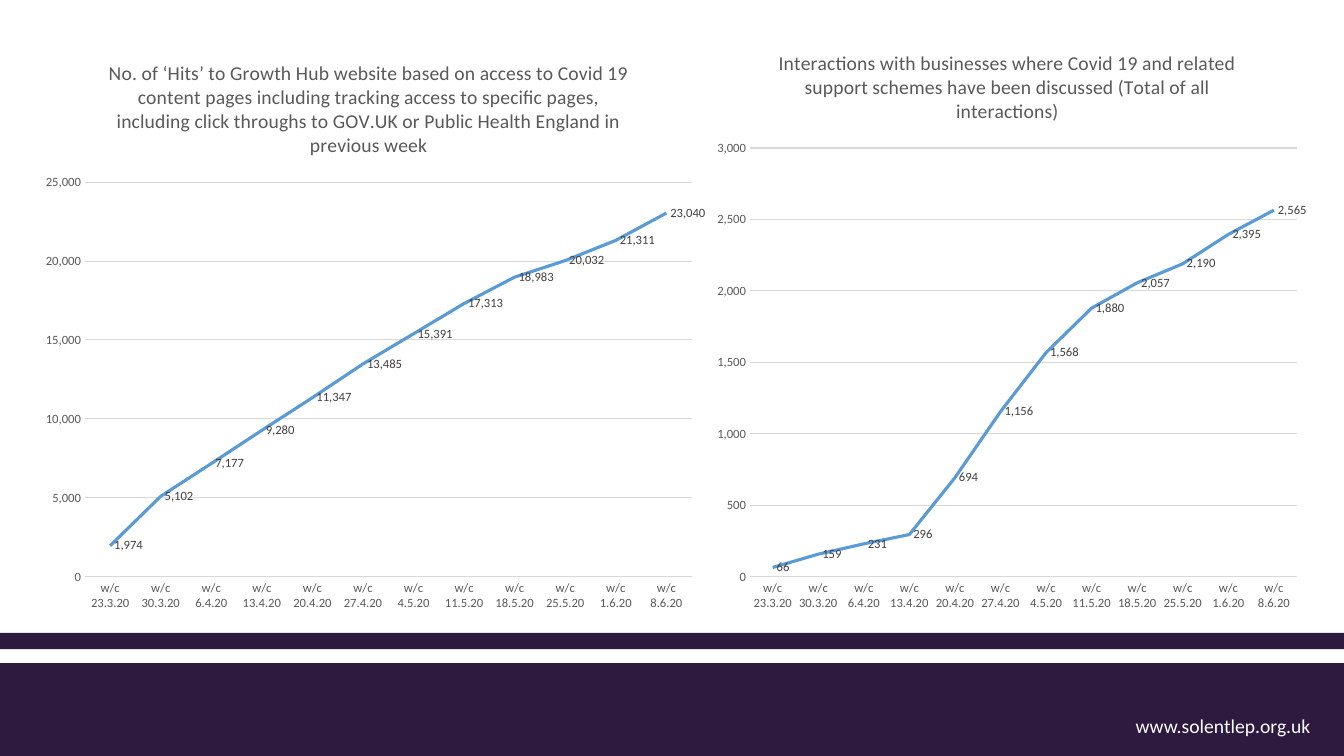
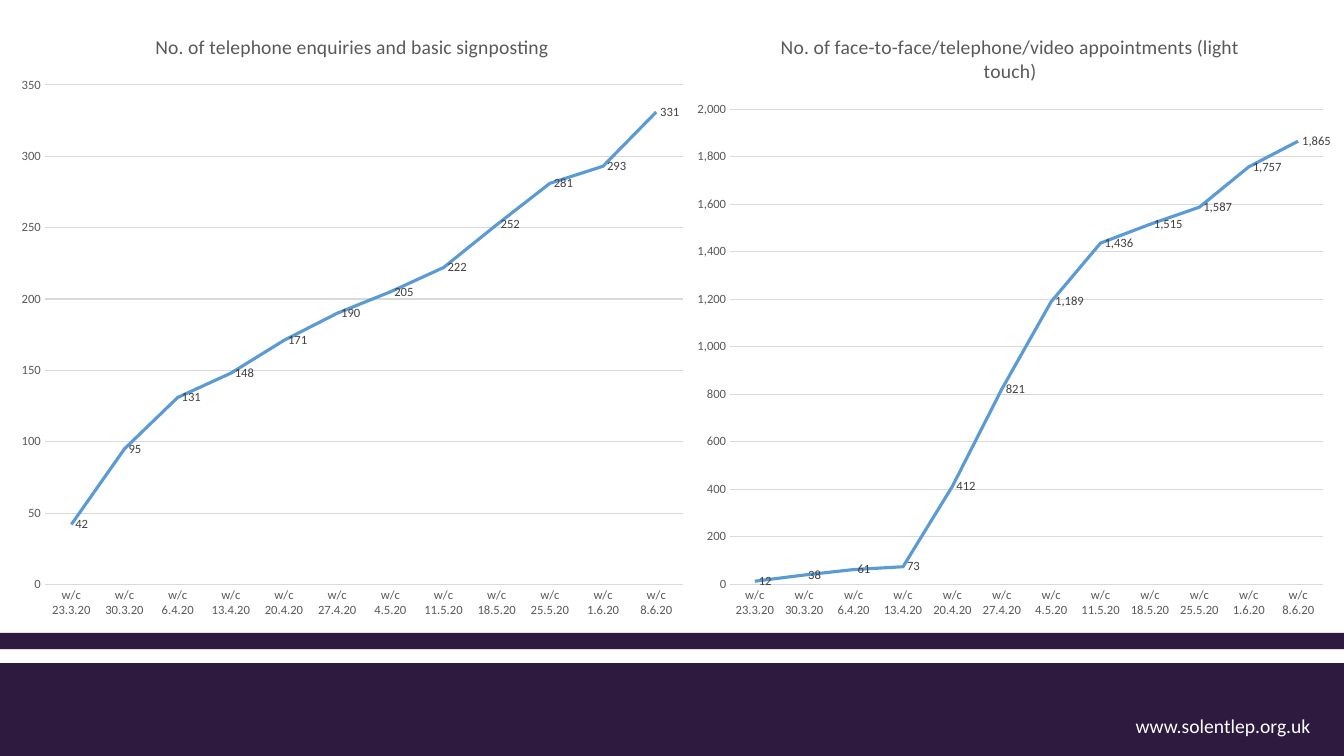
import dataclasses

import pptx
import pptx.chart.chart
import pptx.chart.data
import pptx.dml.color
import pptx.enum.chart
import pptx.enum.shapes
import pptx.oxml
import pptx.oxml.ns
import pptx.slide
import pptx.text.text
import pptx.util

Cm = pptx.util.Cm
Pt = pptx.util.Pt
RGBColor = pptx.dml.color.RGBColor

PURPLE = RGBColor(0x2D, 0x1A, 0x3E)
WHITE = RGBColor(0xFF, 0xFF, 0xFF)
BLACK = RGBColor(0x00, 0x00, 0x00)
BLUE = RGBColor(0x5B, 0x9B, 0xD5)
GRID_GREY = RGBColor(0xD9, 0xD9, 0xD9)
TEXT_GREY = RGBColor(0x59, 0x59, 0x59)
LABEL_GREY = RGBColor(0x40, 0x40, 0x40)

FONT = "Calibri"
NUMBER_FORMAT = "#,##0"
SLIDE_WIDTH = 33.87
SLIDE_HEIGHT = 19.05
WEEKS = [
    f"w/c {date}.20"
    for date in (
        "23.3", "30.3", "6.4", "13.4", "20.4", "27.4",
        "4.5", "11.5", "18.5", "25.5", "1.6", "8.6",
    )
]


@dataclasses.dataclass(frozen=True)
class Box:
    left: float
    top: float
    width: float
    height: float

    def lengths(self) -> tuple[int, int, int, int]:
        return Cm(self.left), Cm(self.top), Cm(self.width), Cm(self.height)


@dataclasses.dataclass(frozen=True)
class LineChart:
    title: str
    frame: Box
    plot: Box
    maximum: int
    step: int
    values: tuple[int, ...]


BANDS = (Box(0, 16.71, SLIDE_WIDTH, 2.34), Box(0, 15.95, SLIDE_WIDTH, 0.41))
ADDRESS_BOX = Box(28.37, 17.86, 5, 1.02)

SLIDES = (
    (
        LineChart(
            "No. of ‘Hits’ to Growth Hub website based on access to Covid 19 "
            "content pages including tracking access to specific pages, including "
            "click throughs to GOV.UK or Public Health England in previous week",
            Box(0.81, 0.97, 16.97, 14.71),
            Box(2.14, 4.59, 15.3, 9.95),
            25000,
            5000,
            (1974, 5102, 7177, 9280, 11347, 13485,
             15391, 17313, 18983, 20032, 21311, 23040),
        ),
        LineChart(
            "Interactions with businesses where Covid 19 and related support "
            "schemes have been discussed (Total of all interactions)",
            Box(17.78, 0.71, 15.21, 14.99),
            Box(18.9, 3.73, 13.78, 10.81),
            3000,
            500,
            (66, 159, 231, 296, 694, 1156, 1568, 1880, 2057, 2190, 2395, 2565),
        ),
    ),
    (
        LineChart(
            "No. of telephone enquiries and basic signposting",
            Box(0.2, 0.3, 17.35, 15.57),
            Box(1.13, 2.14, 16.08, 12.59),
            350,
            50,
            (42, 95, 131, 148, 171, 190, 205, 222, 252, 281, 293, 331),
        ),
        LineChart(
            "No. of face-to-face/telephone/video appointments (light touch)",
            Box(17.25, 0.3, 16.41, 15.57),
            Box(18.4, 2.75, 14.94, 11.97),
            2000,
            200,
            (12, 38, 61, 73, 412, 821, 1189, 1436, 1515, 1587, 1757, 1865),
        ),
    ),
)


def style_font(font: pptx.text.text.Font, size: float, color: RGBColor) -> None:
    font.name = FONT
    font.size = Pt(size)
    font.bold = False
    font.color.rgb = color


def add_footer_to_layout(
    slide: pptx.slide.Slide, layout: pptx.slide.SlideLayout
) -> None:
    footer_shapes = []
    for band in BANDS:
        shape = slide.shapes.add_shape(
            pptx.enum.shapes.MSO_SHAPE.RECTANGLE, *band.lengths()
        )
        shape.shadow.inherit = False
        shape.fill.solid()
        shape.fill.fore_color.rgb = PURPLE
        shape.line.fill.background()
        footer_shapes.append(shape)

    address = slide.shapes.add_textbox(*ADDRESS_BOX.lengths())
    address.text_frame.word_wrap = False
    paragraph = address.text_frame.paragraphs[0]
    paragraph.text = "www.solentlep.org.uk"
    style_font(paragraph.font, 14, WHITE)
    footer_shapes.append(address)

    for shape in footer_shapes:
        layout.shapes.element.append(shape.element)


def place_plot(chart: pptx.chart.chart.Chart, frame: Box, plot: Box) -> None:
    fractions = {
        "x": (plot.left - frame.left) / frame.width,
        "y": (plot.top - frame.top) / frame.height,
        "w": plot.width / frame.width,
        "h": plot.height / frame.height,
    }
    modes = "".join(f'<c:{axis}Mode val="edge"/>' for axis in "xy")
    sizes = "".join(
        f'<c:{name} val="{value:.4f}"/>' for name, value in fractions.items()
    )
    layout = pptx.oxml.parse_xml(
        f'<c:layout {pptx.oxml.ns.nsdecls("c")}><c:manualLayout>'
        f'<c:layoutTarget val="inner"/>{modes}{sizes}'
        "</c:manualLayout></c:layout>"
    )
    plot_area = chart.element.find(".//" + pptx.oxml.ns.qn("c:plotArea"))
    for old_layout in plot_area.findall(pptx.oxml.ns.qn("c:layout")):
        plot_area.remove(old_layout)
    plot_area.insert(0, layout)


def style_axes(chart: pptx.chart.chart.Chart, maximum: int, step: int) -> None:
    for axis in (chart.category_axis, chart.value_axis):
        axis.major_tick_mark = pptx.enum.chart.XL_TICK_MARK.NONE
        axis.minor_tick_mark = pptx.enum.chart.XL_TICK_MARK.NONE
        style_font(axis.tick_labels.font, 9, TEXT_GREY)

    value_axis = chart.value_axis
    value_axis.minimum_scale = 0
    value_axis.maximum_scale = maximum
    value_axis.major_unit = step
    value_axis.tick_labels.number_format = NUMBER_FORMAT
    value_axis.tick_labels.number_format_is_linked = False
    value_axis.format.line.fill.background()
    value_axis.has_major_gridlines = True
    for line in (
        chart.category_axis.format.line,
        value_axis.major_gridlines.format.line,
    ):
        line.color.rgb = GRID_GREY
        line.width = Pt(0.75)


def add_line_chart(slide: pptx.slide.Slide, content: LineChart) -> None:
    data = pptx.chart.data.CategoryChartData(number_format=NUMBER_FORMAT)
    data.categories = WEEKS
    data.add_series("Series 1", content.values)
    chart = slide.shapes.add_chart(
        pptx.enum.chart.XL_CHART_TYPE.LINE, *content.frame.lengths(), data
    ).chart
    style_font(chart.font, 10, BLACK)
    chart.has_legend = False
    chart.has_title = True
    paragraph = chart.chart_title.text_frame.paragraphs[0]
    paragraph.text = content.title
    style_font(paragraph.font, 14, TEXT_GREY)

    place_plot(chart, content.frame, content.plot)
    style_axes(chart, content.maximum, content.step)

    plot = chart.plots[0]
    plot.vary_by_categories = False
    series = plot.series[0]
    series.smooth = False
    series.marker.style = pptx.enum.chart.XL_MARKER_STYLE.NONE
    series.format.line.color.rgb = BLUE
    series.format.line.width = Pt(2.25)

    labels = series.data_labels
    labels.show_value = True
    labels.number_format = NUMBER_FORMAT
    labels.number_format_is_linked = False
    labels.position = pptx.enum.chart.XL_LABEL_POSITION.RIGHT
    style_font(labels.font, 9, LABEL_GREY)


def main() -> None:
    presentation = pptx.Presentation()
    presentation.slide_width = Cm(SLIDE_WIDTH)
    presentation.slide_height = Cm(SLIDE_HEIGHT)
    layout = presentation.slide_layouts.get_by_name("Blank")
    slides = [presentation.slides.add_slide(layout) for _ in SLIDES]
    add_footer_to_layout(slides[0], layout)
    for slide, charts in zip(slides, SLIDES):
        for content in charts:
            add_line_chart(slide, content)
    presentation.save("out.pptx")


if __name__ == "__main__":
    main()
